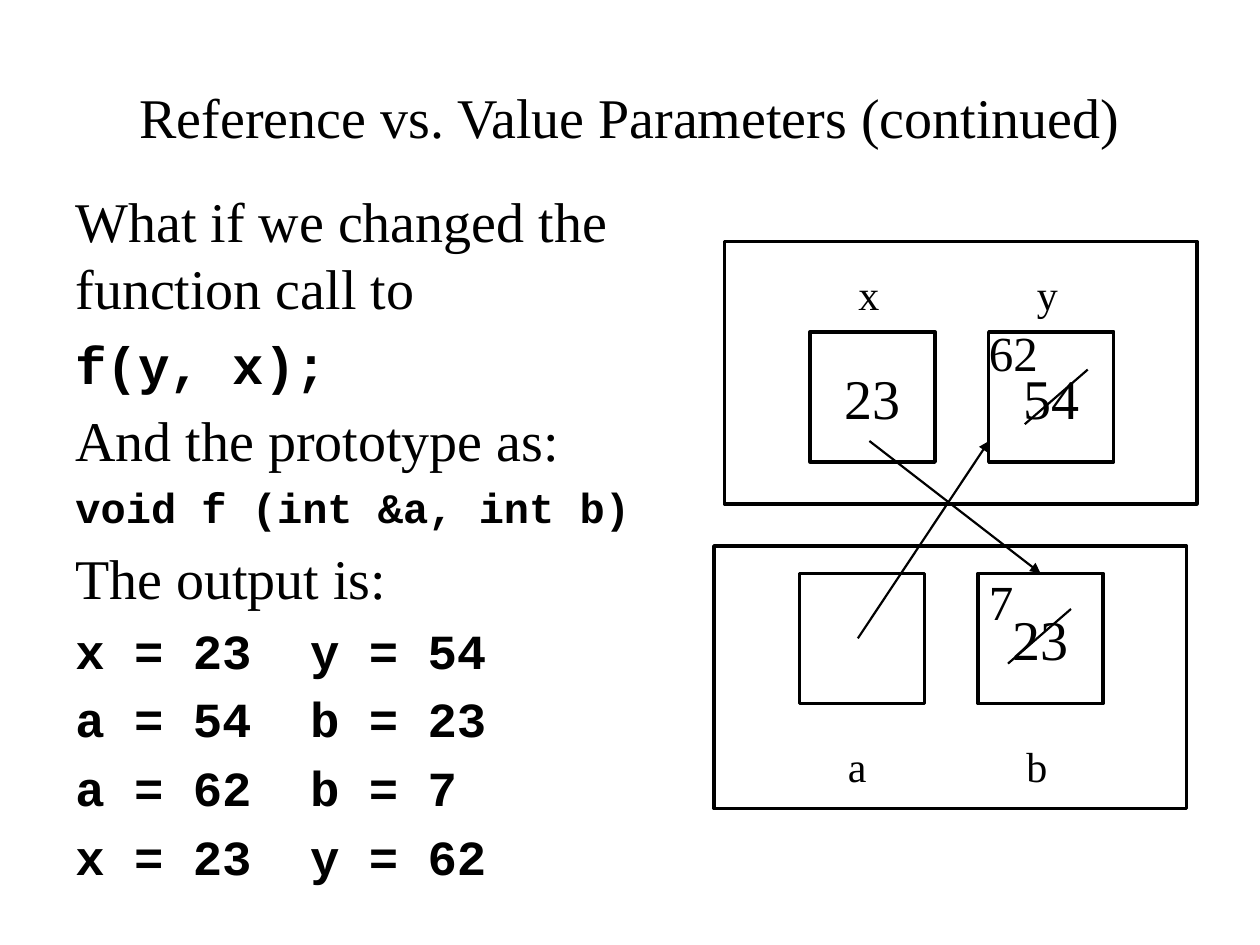
from dataclasses import dataclass

from lxml.etree import SubElement
from pptx import Presentation
from pptx.dml.color import RGBColor
from pptx.enum.shapes import MSO_CONNECTOR, MSO_SHAPE
from pptx.enum.text import MSO_ANCHOR, PP_ALIGN
from pptx.oxml.ns import qn
from pptx.util import Inches, Pt


@dataclass(frozen=True)
class Theme:
    ink: RGBColor = RGBColor(0, 0, 0)
    paper: RGBColor = RGBColor(255, 255, 255)
    serif: str = "Times New Roman"
    code: str = "Courier New"
    large: int = 32
    call: int = 30
    medium: int = 28
    small: int = 24
    outline: float = 2
    stroke: float = 1.25


theme = Theme()
deck = Presentation()
deck.slide_width, deck.slide_height = Inches(10), Inches(7.5)
page = deck.slides.add_slide(deck.slide_layouts[5])
unit = deck.slide_width / 120


def grid(*lengths):
    return [round(length * unit) for length in lengths]


def write(shape, lines, align=PP_ALIGN.LEFT, anchor=MSO_ANCHOR.TOP, wrap=True):
    frame = shape.text_frame
    frame.word_wrap, frame.vertical_anchor = wrap, anchor
    frame.text = "\n".join(text for text, size, face in lines)
    for para, (text, size, face) in zip(frame.paragraphs, lines):
        para.alignment = align
        para.font.size, para.font.name = Pt(size), face
        para.font.bold = face == theme.code
        para.font.color.rgb = theme.ink
    return frame


title = page.shapes.title
title.left, title.top, title.width, title.height = grid(6, 3.6, 108, 15)
write(title, [("Reference vs. Value Parameters (continued)", theme.large, theme.serif)],
      PP_ALIGN.CENTER, MSO_ANCHOR.MIDDLE)

body_lines = [
    ("What if we changed the function call to", theme.large, theme.serif),
    ("f(y, x);", theme.call, theme.code),
    ("And the prototype as:", theme.large, theme.serif),
    ("void f (int &a, int b)", theme.small, theme.code),
    ("The output is:", theme.large, theme.serif),
    ("x = 23  y = 54", theme.medium, theme.code),
    ("a = 54  b = 23", theme.medium, theme.code),
    ("a = 62  b = 7", theme.medium, theme.code),
    ("x = 23  y = 62", theme.medium, theme.code),
]
body = page.shapes.add_textbox(*grid(6, 17.2, 58, 68.9))
for para, (text, size, face) in zip(write(body, body_lines).paragraphs, body_lines):
    para.space_before = Pt(round(size * 0.2, 1))

cell_inset, cell_step, label_inset = 8.16, 17, 3.4
scopes = [
    (69, 23, 31.6, 25, [("x", "23"), ("y", "54")]),
    (68, 52, 54.6, 69.9, [("a", ""), ("b", "23")]),
]
for left, top, cell_top, label_top, variables in scopes:
    cells = [(left + cell_inset + index * cell_step, cell_top, 11.9, 12.4, value)
             for index, (name, value) in enumerate(variables)]
    for *area, value in [(left, top, 45, 25, "")] + cells:
        box = page.shapes.add_shape(MSO_SHAPE.RECTANGLE, *grid(*area))
        box.shadow.inherit = False
        box.fill.solid()
        box.fill.fore_color.rgb = theme.paper
        box.line.color.rgb, box.line.width = theme.ink, Pt(theme.outline)
        if value:
            write(box, [(value, theme.large, theme.serif)],
                  PP_ALIGN.CENTER, MSO_ANCHOR.MIDDLE)
    for (name, value), cell in zip(variables, cells):
        label = page.shapes.add_textbox(*grid(cell[0] + label_inset, label_top, 4.4, 6))
        write(label, [(name, theme.small, theme.serif)], wrap=False)

for value, top, width in [("62", 30.1, 8), ("7", 53.8, 4.8)]:
    update = page.shapes.add_textbox(*grid(93, top, width, 6.8))
    write(update, [(value, theme.medium, theme.serif)], wrap=False)

strokes = [
    (96, 63.2, 102, 58, False),
    (97.6, 40.4, 103.6, 35.2, False),
    (82.8, 42, 99.1, 54.6, True),
    (81.7, 60.8, 94.2, 42, True),
]
for *ends, is_arrow in strokes:
    stroke = page.shapes.add_connector(MSO_CONNECTOR.STRAIGHT, *grid(*ends))
    stroke.line.color.rgb, stroke.line.width = theme.ink, Pt(theme.stroke)
    if is_arrow:
        SubElement(stroke.line._get_or_add_ln(), qn("a:tailEnd"), type="triangle")
    SubElement(stroke._element.spPr, qn("a:effectLst"))

deck.save("out.pptx")
